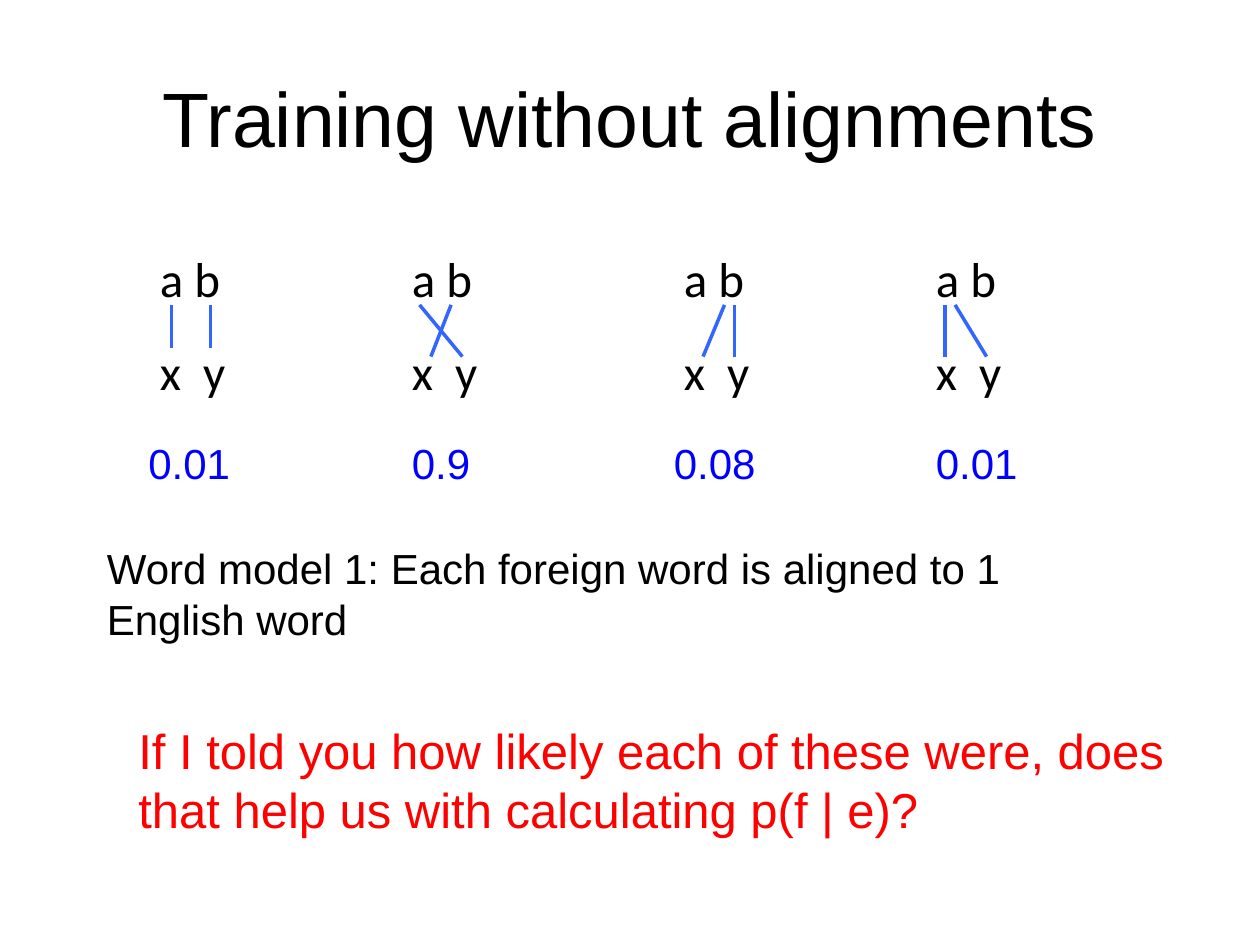
from lxml.etree import SubElement
from pptx import Presentation
from pptx.dml.color import RGBColor
from pptx.enum.shapes import MSO_CONNECTOR as Conn
from pptx.enum.text import MSO_ANCHOR as Anchor, PP_ALIGN as Align
from pptx.oxml.ns import qn
from pptx.util import Inches, Pt

COLORS = {"text": "000000", "link": "3366FF", "prob": "0000FF", "ask": "FF0000"}

# Left edge, probability, its offset from the left edge, links.
# Each link is (top x, bottom x, height), with x measured from the left edge.
PAIRS = [
    (1.17, "0.01", -0.09, [(0.19, 0.19, 0.34), (0.5, 0.5, 0.34)]),
    (3.17, "0.9", 0, [(0.16, 0.5, 0.41), (0.41, 0.25, 0.41)]),
    (5.33, "0.08", -0.08, [(0.42, 0.25, 0.41), (0.5, 0.5, 0.41)]),
    (7.33, "0.01", 0, [(0.17, 0.17, 0.41), (0.25, 0.5, 0.41)]),
]


def add_text(slide, text, box, size=24, font="Arial", color="text",
             wrap=True, align=Align.LEFT, anchor=Anchor.TOP):
    frame = slide.shapes.add_textbox(*map(Inches, box)).text_frame
    frame.word_wrap = wrap
    frame.vertical_anchor = anchor
    para = frame.paragraphs[0]
    para.alignment = align
    run = para.add_run()
    run.text = text
    run.font.size = Pt(size)
    run.font.name = font
    run.font.color.rgb = RGBColor.from_string(COLORS[color])


def add_link(slide, *ends):
    line = slide.shapes.add_connector(Conn.STRAIGHT, *map(Inches, ends))
    line.line.color.rgb = RGBColor.from_string(COLORS["link"])
    line.line.width = Pt(2)
    SubElement(line._element.spPr, qn("a:effectLst"))


def add_pair(slide, left, top, prob, shift, links):
    """Draw one alignment of two word pairs, with its probability below."""
    words = {"size": 28, "font": "Calibri", "wrap": False}
    add_text(slide, "a b", (left, top, 0.69, 0.57), **words)
    add_text(slide, "x  y", (left, top + 0.74, 0.73, 0.57), **words)
    for start, end, height in links:
        add_link(slide, left + start, top + 0.5, left + end, top + 0.5 + height)
    width = 0.86 if len(prob) == 4 else 0.67
    add_text(slide, prob, (left + shift, top + 1.5, width, 0.5),
             color="prob", wrap=False)


def build():
    deck = Presentation()
    deck.slide_width, deck.slide_height = Inches(10), Inches(7.5)
    slide = deck.slides.add_slide(deck.slide_layouts[6])
    add_text(slide, "Training without alignments", (0.5, 0.3, 9, 1.25),
             size=44, align=Align.CENTER, anchor=Anchor.MIDDLE)
    for left, prob, shift, links in PAIRS:
        add_pair(slide, left, 1.92, prob, shift, links)
    add_text(slide, "Word model 1: Each foreign word is aligned to 1 English word",
             (0.75, 4.26, 7.92, 0.91))
    add_text(slide, "If I told you how likely each of these were, does that "
             "help us with calculating p(f | e)?",
             (1, 5.67, 8.48, 1.04), size=28, color="ask")
    deck.save("out.pptx")


if __name__ == "__main__":
    build()
